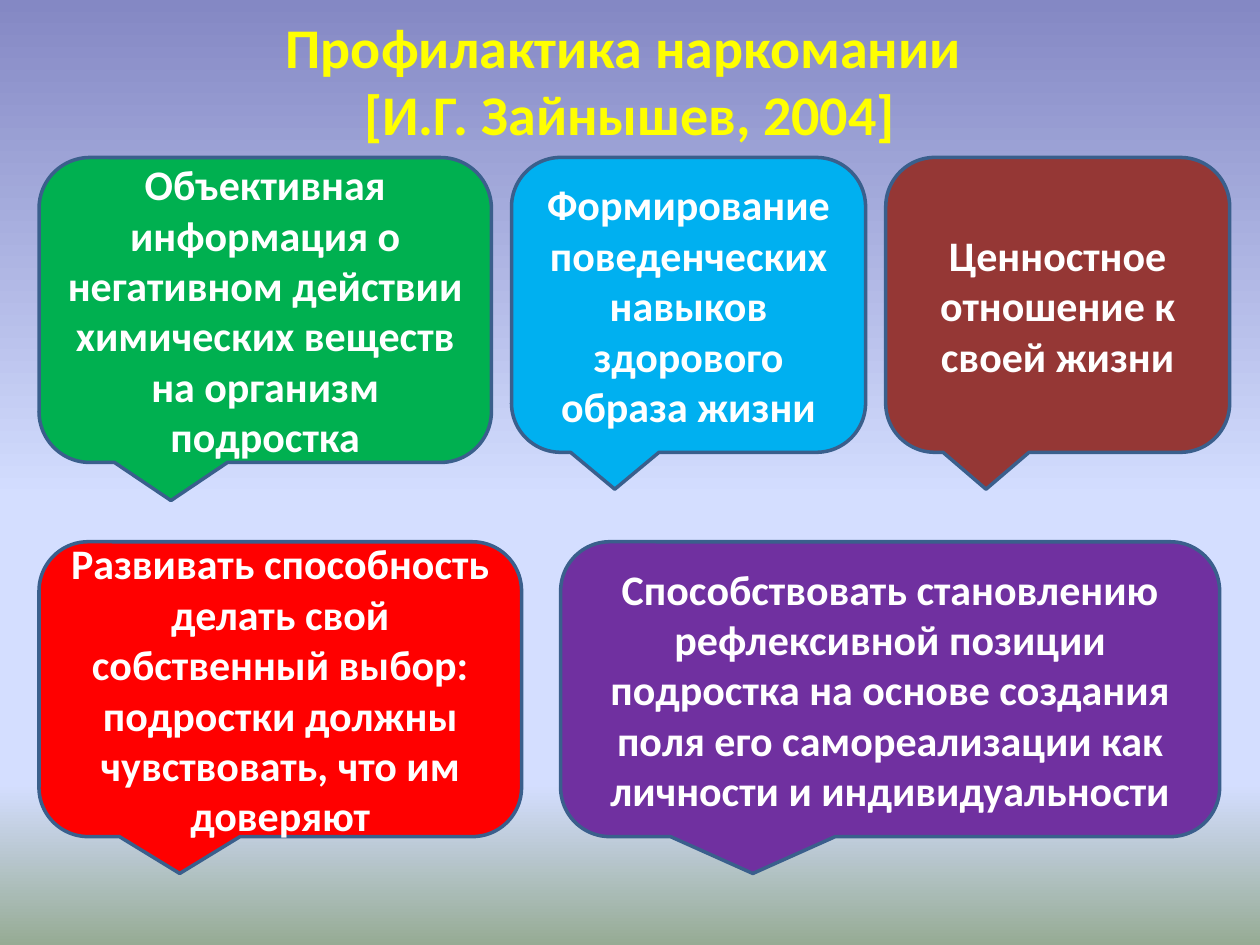
import dataclasses

import lxml.etree
import pptx
import pptx.dml.color
import pptx.enum.shapes
import pptx.enum.text
import pptx.oxml.ns
import pptx.shapes.autoshape
import pptx.slide
import pptx.util
from pptx.util import Inches


@dataclasses.dataclass(frozen=True)
class Theme:
    font: str = "Calibri"
    title_size: int = 32
    callout_size: int = 24
    title_color: str = "FFFF00"
    callout_color: str = "FFFFFF"
    outline: str = "3A5F8C"
    outline_width: float = 2
    background: tuple[tuple[int, str], ...] = (
        (0, "8488C4"),
        (53, "D4DEFF"),
        (83, "D4DEFF"),
        (100, "96AB94"),
    )


@dataclasses.dataclass(frozen=True)
class Callout:
    text: str
    width: float
    fill: str
    height: float = 2.34


@dataclasses.dataclass(frozen=True)
class Row:
    top: float
    gap: float
    callouts: tuple[Callout, ...]


THEME = Theme()
LEFT = 0.31
ROWS = (
    Row(1.25, 0.16, (
        Callout("Объективная информация о негативном действии химических веществ "
                "на организм подростка", 3.59, "00B050", 2.42),
        Callout("Формирование поведенческих навыков здорового образа жизни",
                2.81, "00B0F0"),
        Callout("Ценностное отношение к своей жизни", 2.73, "953735"),
    )),
    Row(4.3, 0.31, (
        Callout("Развивать способность делать свой собственный выбор: подростки "
                "должны чувствовать, что им доверяют", 3.83, "FF0000"),
        Callout("Способствовать становлению рефлексивной позиции подростка на основе "
                "создания поля его самореализации как личности и индивидуальности",
                5.23, "7030A0"),
    )),
)


def rgb(color: str) -> pptx.dml.color.RGBColor:
    return pptx.dml.color.RGBColor.from_string(color)


def write_text(shape: pptx.shapes.autoshape.Shape, text: str, *, size: int,
               color: str, bold: bool = True) -> None:
    frame = shape.text_frame
    frame.word_wrap = True
    frame.vertical_anchor = pptx.enum.text.MSO_ANCHOR.MIDDLE
    paragraph = frame.paragraphs[0]
    paragraph.text = text
    paragraph.alignment = pptx.enum.text.PP_ALIGN.CENTER
    for run in paragraph.runs:
        run.font.name = THEME.font
        run.font.size = pptx.util.Pt(size)
        run.font.bold = bold
        run.font.color.rgb = rgb(color)


def paint_background(slide: pptx.slide.Slide) -> None:
    fill = slide.background.fill
    fill.gradient()
    fill.gradient_angle = 270
    qn = pptx.oxml.ns.qn
    stops = next(slide.element.iter(qn("a:gsLst")))
    for stop in list(stops):
        stops.remove(stop)
    for position, color in THEME.background:
        stop = lxml.etree.SubElement(stops, qn("a:gs"), pos=str(position * 1000))
        lxml.etree.SubElement(stop, qn("a:srgbClr"), val=color)


def draw_title(slide: pptx.slide.Slide) -> None:
    title = slide.shapes.add_textbox(Inches(0.5), Inches(0.16), Inches(9), Inches(0.94))
    write_text(title, "Профилактика наркомании \v[И.Г. Зайнышев, 2004]",
               size=THEME.title_size, color=THEME.title_color)


def draw_callout(slide: pptx.slide.Slide, callout: Callout, left: float, top: float) -> None:
    shape = slide.shapes.add_shape(
        pptx.enum.shapes.MSO_SHAPE.ROUNDED_RECTANGULAR_CALLOUT,
        Inches(left), Inches(top), Inches(callout.width), Inches(callout.height))
    shape.shadow.inherit = False
    shape.fill.solid()
    shape.fill.fore_color.rgb = rgb(callout.fill)
    shape.line.color.rgb = rgb(THEME.outline)
    shape.line.width = pptx.util.Pt(THEME.outline_width)
    write_text(shape, callout.text, size=THEME.callout_size, color=THEME.callout_color)


def draw_row(slide: pptx.slide.Slide, row: Row) -> None:
    left = LEFT
    for callout in row.callouts:
        draw_callout(slide, callout, left, row.top)
        left += callout.width + row.gap


def main() -> None:
    presentation = pptx.Presentation()
    presentation.slide_width = Inches(10)
    presentation.slide_height = Inches(7.5)
    slide = presentation.slides.add_slide(presentation.slide_layouts[6])
    paint_background(slide)
    draw_title(slide)
    for row in ROWS:
        draw_row(slide, row)
    presentation.save("out.pptx")


if __name__ == "__main__":
    main()
